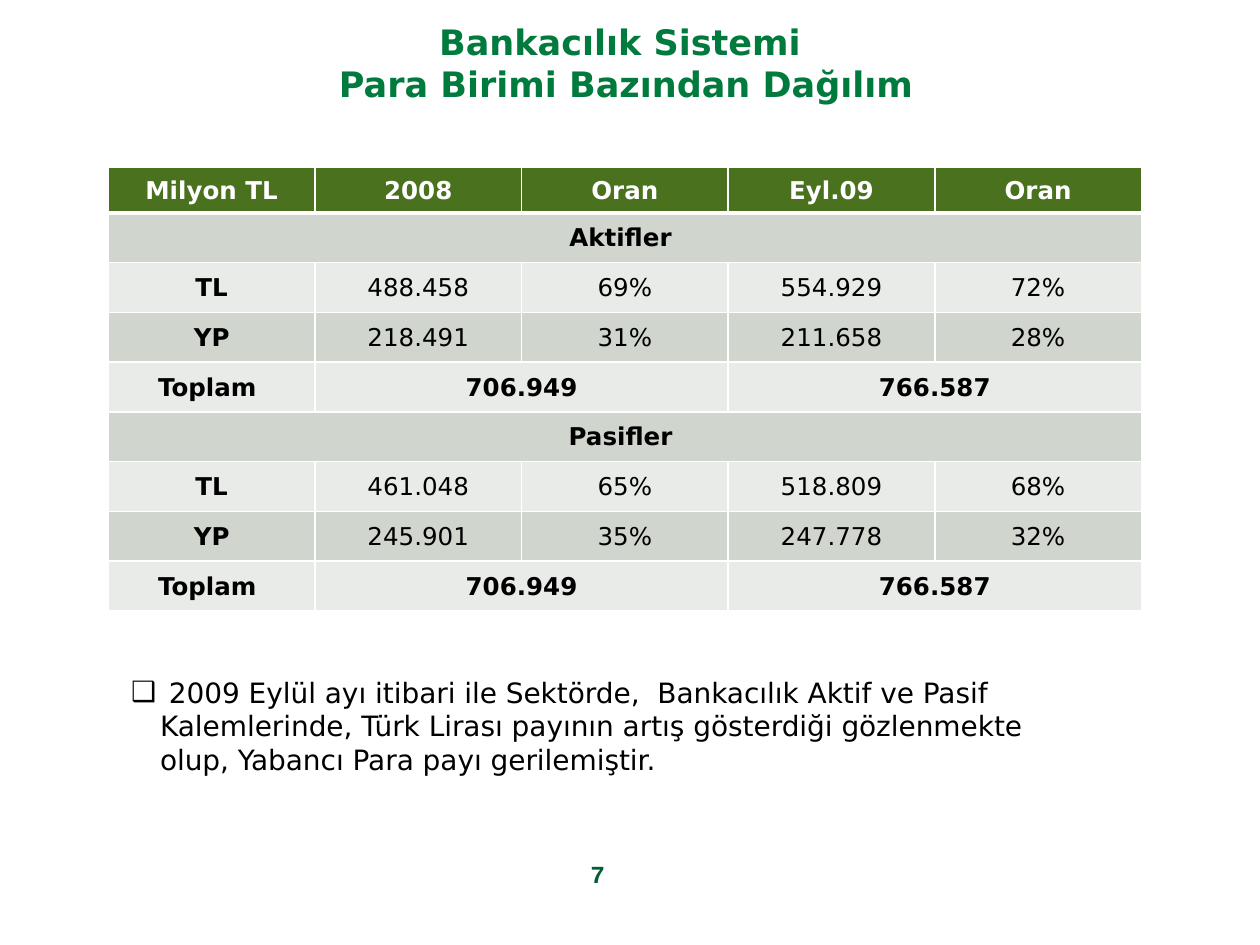
from lxml import etree
from pptx import Presentation
from pptx.dml.color import RGBColor
from pptx.enum.text import MSO_ANCHOR, MSO_AUTO_SIZE, PP_ALIGN
from pptx.oxml.ns import qn
from pptx.util import Inches, Pt

CENTER = PP_ALIGN.CENTER
TOP, MIDDLE = MSO_ANCHOR.TOP, MSO_ANCHOR.MIDDLE
NO_AUTOFIT = MSO_AUTO_SIZE.NONE

FONT = "DejaVu Sans"
NUMBER_FONT = "Courier New"
TITLE_GREEN = RGBColor(0x00, 0x7A, 0x3D)
NUMBER_GREEN = RGBColor(0x00, 0x5E, 0x31)
HEADER_GREEN = RGBColor(0x49, 0x71, 0x1E)
BANDS = RGBColor(0xE9, 0xEB, 0xE8), RGBColor(0xD0, 0xD5, 0xCD)
WHITE = RGBColor(0xFF, 0xFF, 0xFF)
BLACK = RGBColor(0x00, 0x00, 0x00)

TITLE = ["Bankacılık Sistemi ", "Para Birimi Bazından Dağılım"]
COMMENT = (" 2009 Eylül ayı itibari ile Sektörde,  Bankacılık Aktif ve Pasif "
           "Kalemlerinde, Türk Lirası payının artış gösterdiği gözlenmekte "
           "olup, Yabancı Para payı gerilemiştir.")
PAGE_NUMBER = "7"

# A row with fewer than five entries has cells that span equal shares of the rest.
ROWS = [
    ["Milyon TL", "2008", "Oran", "Eyl.09", "Oran"],
    ["Aktifler "],
    ["TL", "488.458", "69%", "554.929", "72%"],
    ["YP", "218.491", "31%", "211.658", "28%"],
    ["Toplam ", "706.949", "766.587"],
    ["Pasifler "],
    ["TL", "461.048", "65%", "518.809", "68%"],
    ["YP", "245.901", "35%", "247.778", "32%"],
    ["Toplam ", "706.949", "766.587"],
]
STARTS = {1: [0], 3: [0, 1, 3], 5: [0, 1, 2, 3, 4]}
COLUMNS = 5
COLUMN_WIDTH, HEADER_HEIGHT, ROW_HEIGHT = 1.64, 0.36, 0.395


def place(sp, left, top, width, height):
    sp.left, sp.top = Inches(left), Inches(top)
    sp.width, sp.height = Inches(width), Inches(height)


def style(p, size, color, bold=False, name=FONT):
    for r in p.runs:
        r.font.size, r.font.bold, r.font.name = Pt(size), bold, name
        r.font.color.rgb = color


def add_borders(cell, widths):
    """Draw white borders; widths gives points for left, right, top and bottom."""
    tc_pr = cell._tc.get_or_add_tcPr()
    for side, width in zip("LRTB", widths):
        ln = etree.SubElement(tc_pr, qn(f"a:ln{side}"), w=str(Pt(width)))
        fill = etree.SubElement(ln, qn("a:solidFill"))
        etree.SubElement(fill, qn("a:srgbClr"), val=str(WHITE))


def add_title(slide):
    sp = slide.shapes.title
    place(sp, 0.47, 0.16, 9, 0.67)
    tf = sp.text_frame
    tf.text = "\n".join(TITLE)
    tf.auto_size, tf.vertical_anchor = NO_AUTOFIT, MIDDLE
    for p in tf.paragraphs:
        p.alignment = CENTER
        style(p, 20, TITLE_GREEN, bold=True)


def add_balance_table(slide):
    height = HEADER_HEIGHT + ROW_HEIGHT * (len(ROWS) - 1)
    table = slide.shapes.add_table(
        len(ROWS), COLUMNS, Inches(0.86), Inches(1.33),
        Inches(COLUMN_WIDTH * COLUMNS), Inches(height)).table
    for column in table.columns:
        column.width = Inches(COLUMN_WIDTH)
    for i, values in enumerate(ROWS):
        header = i == 0
        table.rows[i].height = Inches(HEADER_HEIGHT if header else ROW_HEIGHT)
        for j in range(COLUMNS):
            cell = table.cell(i, j)
            add_borders(cell, (1, 1, 3 if i == 1 else 1, 3 if header else 1))
            cell.fill.solid()
            cell.fill.fore_color.rgb = HEADER_GREEN if header else BANDS[i % 2]
        starts = STARTS[len(values)]
        for text, start, end in zip(values, starts, starts[1:] + [COLUMNS]):
            cell = table.cell(i, start)
            if end - start > 1:
                cell.merge(table.cell(i, end - 1))
            cell.vertical_anchor = MIDDLE
            cell.margin_left = cell.margin_right = cell.margin_top = Inches(0.01)
            cell.margin_bottom = 0
            p = cell.text_frame.paragraphs[0]
            p.text, p.alignment = text, CENTER
            bold = header or start == 0 or len(values) < COLUMNS
            style(p, 14, WHITE if header else BLACK, bold)


def add_comment(slide):
    sp = slide.placeholders[1]
    place(sp, 0.94, 5.31, 7.89, 0.91)
    tf = sp.text_frame
    tf.text = COMMENT
    tf.auto_size, tf.vertical_anchor = NO_AUTOFIT, TOP
    p = tf.paragraphs[0]
    p.space_before = Pt(0)
    p_pr = p._p.get_or_add_pPr()
    p_pr.set("marL", str(Inches(0.23)))
    p_pr.set("indent", str(-Inches(0.23)))
    etree.SubElement(p_pr, qn("a:buChar"), char="❑")
    style(p, 16, BLACK)


def add_page_number(slide):
    sp = slide.shapes.add_textbox(
        Inches(3.58), Inches(6.82), Inches(2.33), Inches(0.52))
    tf = sp.text_frame
    tf.word_wrap = True
    tf.text = PAGE_NUMBER
    p = tf.paragraphs[0]
    p.alignment, p.line_spacing = CENTER, 0.76
    style(p, 14, NUMBER_GREEN, bold=True, name=NUMBER_FONT)


def main():
    prs = Presentation()
    prs.slide_width, prs.slide_height = Inches(10), Inches(7.5)
    slide = prs.slides.add_slide(prs.slide_layouts[1])
    add_title(slide)
    add_balance_table(slide)
    add_comment(slide)
    add_page_number(slide)
    prs.save("out.pptx")


if __name__ == "__main__":
    main()
